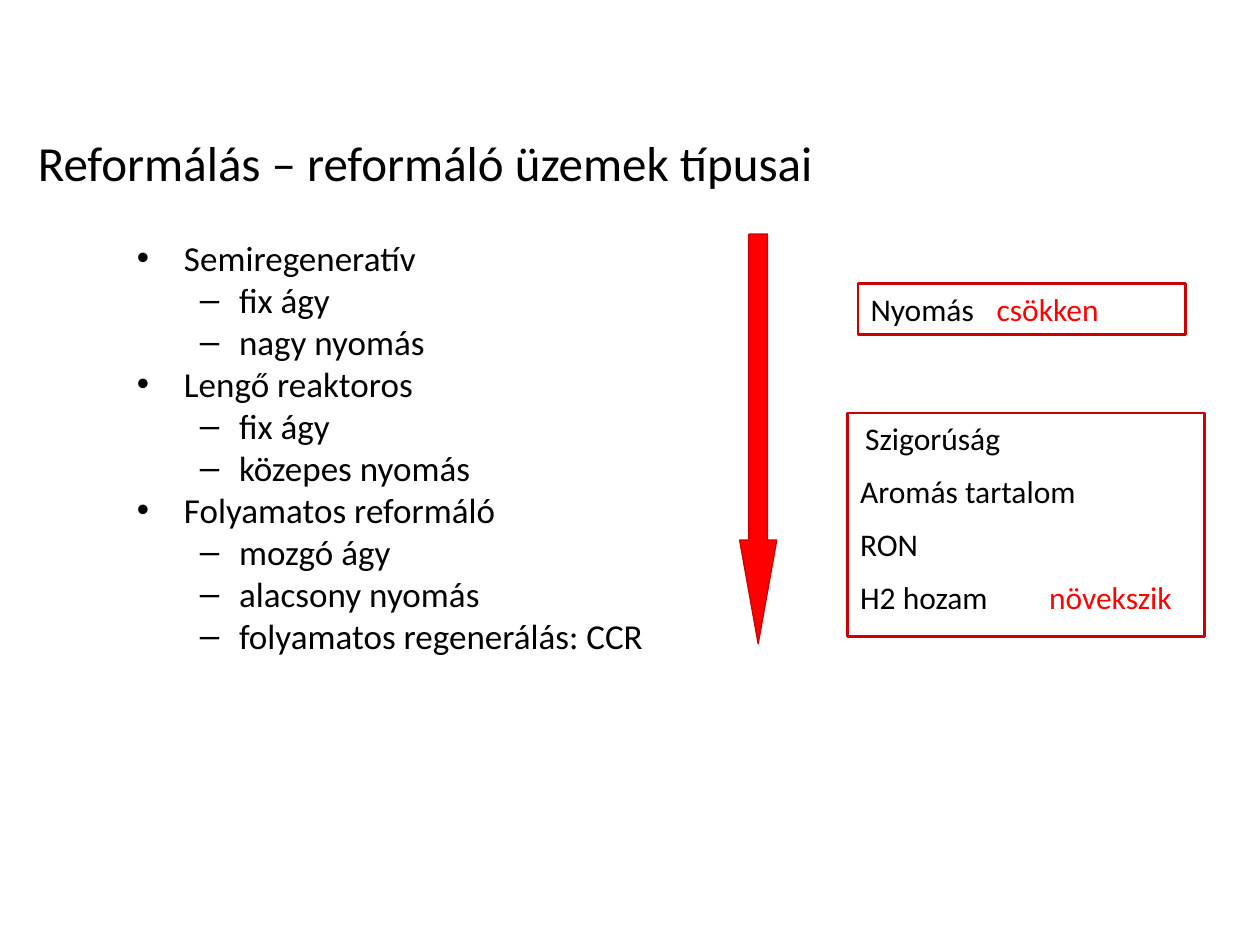
from lxml import etree
from pptx import Presentation
from pptx.dml.color import RGBColor
from pptx.enum.shapes import MSO_SHAPE
from pptx.enum.text import MSO_ANCHOR, MSO_AUTO_SIZE, PP_ALIGN
from pptx.oxml.ns import qn
from pptx.util import Cm, Pt

RECTANGLE, DOWN_ARROW = MSO_SHAPE.RECTANGLE, MSO_SHAPE.DOWN_ARROW
TOP, LEFT, NO_AUTOFIT = MSO_ANCHOR.TOP, PP_ALIGN.LEFT, MSO_AUTO_SIZE.NONE

BLACK = RGBColor(0x00, 0x00, 0x00)
RED = RGBColor(0xFF, 0x00, 0x00)
DARK_RED = RGBColor(0xCC, 0x00, 0x00)
FONT = "Calibri"

TITLE = "Reformálás – reformáló üzemek típusai"
REFORMER_TYPES = [
    ("Semiregeneratív", ["fix ágy", "nagy nyomás"]),
    ("Lengő reaktoros", ["fix ágy", "közepes nyomás"]),
    ("Folyamatos reformáló",
     ["mozgó ágy", "alacsony nyomás", "folyamatos regenerálás: CCR"]),
]
TREND_BOXES = [
    {"at": (17.3, 5.72, 6.6, 1.02), "tab": 2.36,
     "lines": [("Nyomás", "csökken", 0)]},
    {"at": (17.09, 8.33, 7.19, 4.5), "tab": 4.15,
     "lines": [("Szigorúság", "", 0.1), ("Aromás tartalom", "", 0),
               ("RON", "", 0), ("H2 hozam", "növekszik", 0)]},
]
TITLE_AT = (0.51, 2.18, 21.16, 1.47)
LIST_AT = (2.51, 4.64, 15.14, 10.97)
ARROW_AT = (14.91, 4.72, 0.75, 8.26)
BULLETS = [("•", 0.95, 0.95), ("–", 2.06, 0.79)]


def lengths(values):
    return [Cm(value) for value in values]


def prepare_frame(shape):
    frame = shape.text_frame
    frame.word_wrap = True
    frame.auto_size = NO_AUTOFIT
    frame.vertical_anchor = TOP
    return frame


def add_text(paragraph, text, size=18, color=BLACK):
    paragraph.alignment = LEFT
    run = paragraph.add_run()
    run.text = text
    run.font.name = FONT
    run.font.size = Pt(size)
    run.font.color.rgb = color


def next_paragraph(frame, index):
    return frame.add_paragraph() if index else frame.paragraphs[0]


def set_indent(paragraph, left, hanging=0):
    properties = paragraph._p.get_or_add_pPr()
    properties.set("marL", str(Cm(left)))
    properties.set("indent", str(-Cm(hanging)))
    return properties


def add_shape(slide, kind, at, line_width, fill=None):
    shape = slide.shapes.add_shape(kind, *lengths(at))
    shape.shadow.inherit = False
    if fill is None:
        shape.fill.background()
    else:
        shape.fill.solid()
        shape.fill.fore_color.rgb = fill
    shape.line.color.rgb = DARK_RED
    shape.line.width = Pt(line_width)
    return shape


def add_title(slide):
    title = slide.shapes.title
    title.left, title.top, title.width, title.height = lengths(TITLE_AT)
    paragraph = prepare_frame(title).paragraphs[0]
    paragraph.line_spacing = 1.3
    add_text(paragraph, TITLE, size=28)


def add_type_list(slide):
    frame = prepare_frame(slide.shapes.add_textbox(*lengths(LIST_AT)))
    items = []
    for name, features in REFORMER_TYPES:
        items.append((name, 0))
        items += [(feature, 1) for feature in features]
    for index, (text, level) in enumerate(items):
        bullet, left, hanging = BULLETS[level]
        paragraph = next_paragraph(frame, index)
        paragraph.level = level
        paragraph.line_spacing = Pt(24)
        properties = set_indent(paragraph, left, hanging)
        etree.SubElement(properties, qn("a:buFont")).set("typeface", "Arial")
        etree.SubElement(properties, qn("a:buChar")).set("char", bullet)
        add_text(paragraph, text, size=20)


def add_trend_box(slide, at, tab, lines):
    frame = prepare_frame(add_shape(slide, RECTANGLE, at, 1.5))
    for index, (quantity, trend, indent) in enumerate(lines):
        paragraph = next_paragraph(frame, index)
        if index:
            paragraph.space_before = Pt(8.6)
        properties = set_indent(paragraph, indent)
        add_text(paragraph, quantity)
        if trend:
            tabs = etree.SubElement(properties, qn("a:tabLst"))
            etree.SubElement(tabs, qn("a:tab"), pos=str(Cm(tab)), algn="l")
            add_text(paragraph, "\t" + trend, color=RED)


def main():
    presentation = Presentation()
    presentation.slide_width, presentation.slide_height = Cm(25.4), Cm(19.05)
    slide = presentation.slides.add_slide(presentation.slide_layouts[5])
    add_title(slide)
    add_type_list(slide)
    arrow = add_shape(slide, DOWN_ARROW, ARROW_AT, 0.75, fill=RED)
    arrow.adjustments[0], arrow.adjustments[1] = 0.5, 2.79
    for box in TREND_BOXES:
        add_trend_box(slide, **box)
    presentation.save("out.pptx")


if __name__ == "__main__":
    main()
